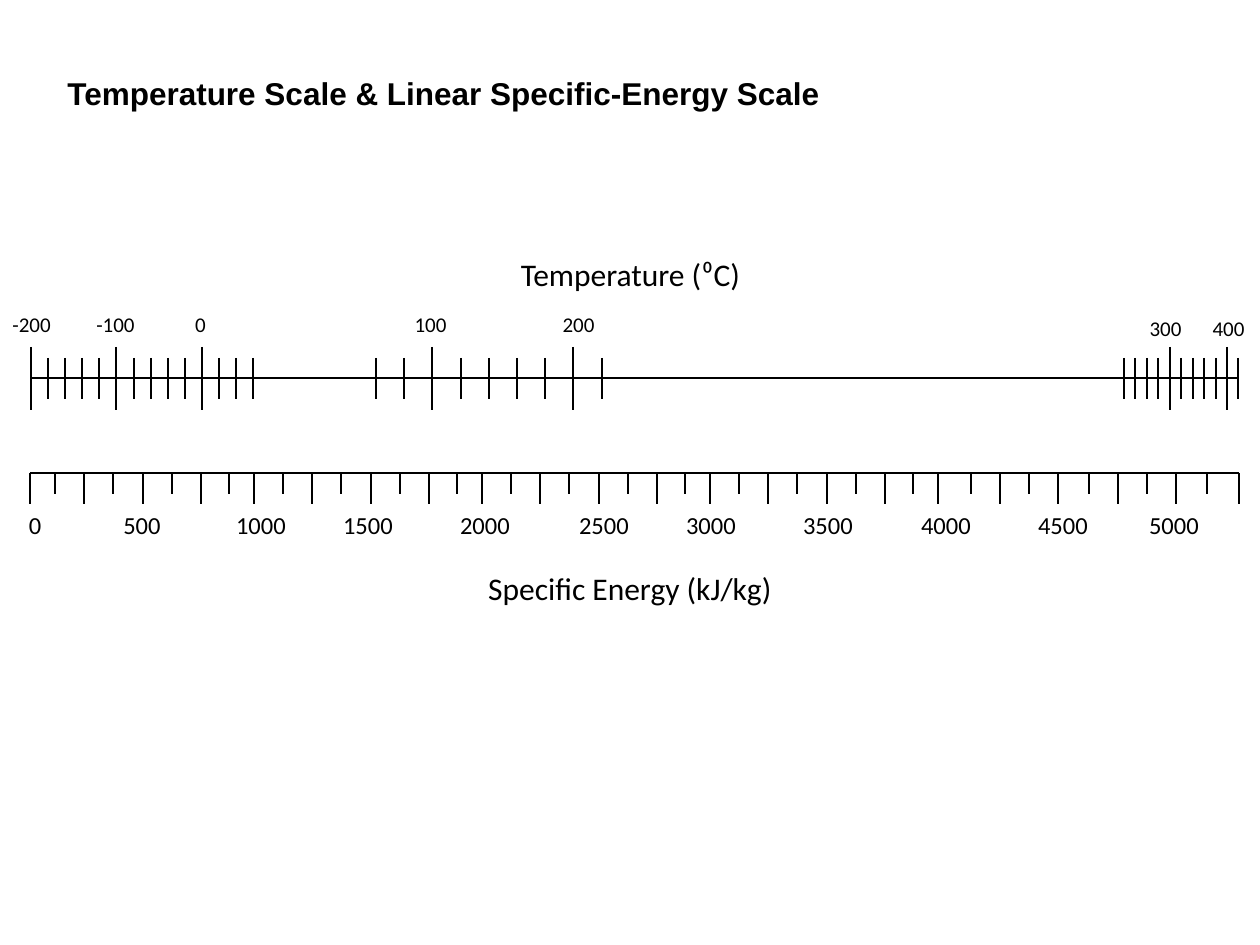
import pptx
import pptx.dml.color
import pptx.enum.shapes
import pptx.enum.text
import pptx.oxml
import pptx.oxml.ns
import pptx.util
import lxml.etree

EMU_PER_PX = 914400 // 126
BLACK = "000000"
CENTER = pptx.enum.text.PP_ALIGN.CENTER
LEFT = pptx.enum.text.PP_ALIGN.LEFT

TEMPERATURE_AXIS_Y = 378
ENERGY_AXIS_Y = 473
AXIS_RIGHT = 1239

# First tick, tick spacing, tick count, index of the first long tick.
TEMPERATURE_RANGES = [
    (31, 17.1, 14, 0),
    (376, 28.2, 9, 2),
    (1124, 11.45, 11, 4),
]
# Label, centre, top.
TEMPERATURE_LABELS = [
    ("-200", 31, 305), ("-100", 115, 305), ("0", 200, 305), ("100", 430, 305),
    ("200", 578, 305), ("300", 1165, 309), ("400", 1228, 309),
]

# The energy ticks repeat in four blocks, followed by a wider last stretch.
ENERGY_START = 30
ENERGY_BLOCK_START, ENERGY_BLOCK_WIDTH = 55, 228
ENERGY_BLOCK_OFFSETS = [0, 29, 58, 88, 117, 146, 174, 199]
ENERGY_LAST_TICKS = [971, 1000, 1029, 1058, 1089, 1118, 1147, 1176, 1207, AXIS_RIGHT]
ENERGY_LABEL_CENTERS = [35, 142, 261, 368, 485, 604, 711, 828, 946, 1063, 1174]


def px(length):
    return pptx.util.Emu(round(length) * EMU_PER_PX)


def color(value):
    return pptx.dml.color.RGBColor.from_string(value)


def add_line(slide, x1, y1, x2, y2):
    line = slide.shapes.add_connector(
        pptx.enum.shapes.MSO_CONNECTOR.STRAIGHT, px(x1), px(y1), px(x2), px(y2))
    line.line.color.rgb = color(BLACK)
    line.line.width = pptx.util.Pt(0.75)
    properties = line._element.spPr
    lxml.etree.SubElement(properties, pptx.oxml.ns.qn("a:effectLst"))


def add_text(slide, text, box, size, font="Calibri", bold=False, align=CENTER):
    shape = slide.shapes.add_textbox(*map(px, box))
    frame = shape.text_frame
    frame.word_wrap = True
    frame.auto_size = pptx.enum.text.MSO_AUTO_SIZE.SHAPE_TO_FIT_TEXT
    paragraph = frame.paragraphs[0]
    paragraph.text = text
    paragraph.alignment = align
    paragraph.font.name = font
    paragraph.font.size = pptx.util.Pt(size)
    paragraph.font.bold = bold
    paragraph.font.color.rgb = color(BLACK)


def add_temperature_scale(slide):
    add_text(slide, "Temperature (⁰C)", (494, 249, 273, 50), 18)
    add_line(slide, 31, TEMPERATURE_AXIS_Y, AXIS_RIGHT, TEMPERATURE_AXIS_Y)
    for start, spacing, count, first_long in TEMPERATURE_RANGES:
        for index in range(count):
            x = start + index * spacing
            is_long = index % 5 == first_long % 5 if first_long else index % 5 == 0
            top, bottom = (347, 410) if is_long else (358, 399)
            add_line(slide, x, top, x, bottom)
    for label, center, top in TEMPERATURE_LABELS:
        add_text(slide, label, (center - 52, top, 105, 38), 12)


def energy_ticks():
    blocks = [ENERGY_BLOCK_START + block * ENERGY_BLOCK_WIDTH + offset
              for block in range(4) for offset in ENERGY_BLOCK_OFFSETS]
    return [ENERGY_START] + blocks + ENERGY_LAST_TICKS


def add_energy_scale(slide):
    add_line(slide, ENERGY_START, ENERGY_AXIS_Y, AXIS_RIGHT, ENERGY_AXIS_Y)
    for index, x in enumerate(energy_ticks()):
        add_line(slide, x, ENERGY_AXIS_Y, x, 494 if index % 2 else 504)
    for index, center in enumerate(ENERGY_LABEL_CENTERS):
        add_text(slide, str(index * 500), (center - 44, 504, 88, 43), 14)
    add_text(slide, "Specific Energy (kJ/kg)", (461, 563, 338, 50), 18)


def main():
    presentation = pptx.Presentation()
    presentation.slide_width = px(1260)
    presentation.slide_height = px(945)
    slide = presentation.slides.add_slide(presentation.slide_layouts[6])
    add_text(slide, "Temperature Scale & Linear Specific-Energy Scale",
             (55, 68, 799, 50), 18, font="Arial", bold=True, align=LEFT)
    add_temperature_scale(slide)
    add_energy_scale(slide)
    presentation.save("out.pptx")


if __name__ == "__main__":
    main()
